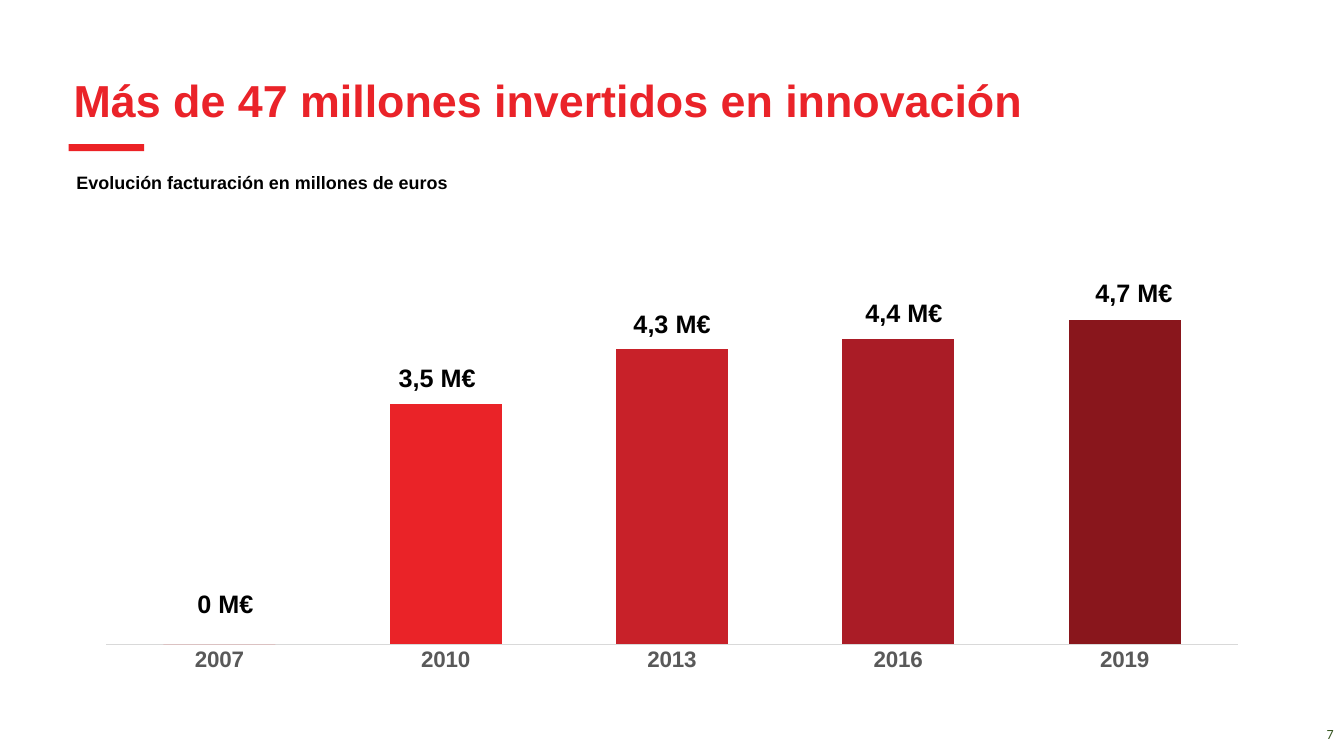
from lxml import etree
from pptx import Presentation
from pptx.chart.data import CategoryChartData
from pptx.dml.color import RGBColor
from pptx.enum import chart as ch, shapes, text
from pptx.util import Inches, Pt

RED = "EA2329"
BAR_COLORS = ["EA2328", "EA2328", "C82129", "AA1C26", "89161C"]
YEARS = ["2007", "2010", "2013", "2016", "2019"]
VALUES = [0, 74, 91, 94, 100]
LABELS = [
    ("0 M€", 1.74, 5.79),
    ("3,5 M€", 3.84, 3.55),
    ("4,3 M€", 6.17, 3.01),
    ("4,4 M€", 8.47, 2.9),
    ("4,7 M€", 10.75, 2.7),
]


def rgb(hex_color):
    """Turn a hex string into a colour."""
    return RGBColor.from_string(hex_color)


def set_font(font, color, **fmt):
    """Set the colour and format values of a font."""
    font.color.rgb = rgb(color)
    for name, value in fmt.items():
        setattr(font, name, value)


def add_text(s, box, content, size, color="000000", name="Arial", bold=True,
             frame=None, para=None):
    """Add a one-paragraph text box."""
    tf = s.shapes.add_textbox(*map(Inches, box)).text_frame
    p = tf.paragraphs[0]
    for target, fmt in ((tf, {"word_wrap": True, **(frame or {})}), (p, para or {})):
        for key, value in fmt.items():
            setattr(target, key, value)
    r = p.add_run()
    r.text = content
    set_font(r.font, color, size=Pt(size), name=name, bold=bold)


def add_header(s, x, y, w):
    """Place the title, its red rule and the subtitle."""
    margins = {"margin_left": Inches(0.05), "margin_right": Inches(0.05),
               "margin_top": Inches(0.03), "margin_bottom": Inches(0.03)}
    add_text(s, (x, y, w, 0.89), "Más de 47 millones invertidos en innovación",
             32, RED, frame={"vertical_anchor": text.MSO_ANCHOR.BOTTOM, **margins},
             para={"line_spacing": 0.9})
    sp = s.shapes.add_shape(shapes.MSO_SHAPE.RECTANGLE, Inches(x), Inches(y + 1.03),
                            Inches(0.75), Inches(0.07))
    sp.shadow.inherit = False
    sp.fill.solid()
    sp.fill.fore_color.rgb = rgb("EC2226")
    sp.line.fill.background()
    add_text(s, (x - 0.02, y + 1.29, 4.13, 0.31),
             "Evolución facturación en millones de euros", 12.8,
             para={"line_spacing": 0.8})


def set_plot_area(chart, **fractions):
    """Fix the inner plot area as fractions of the chart."""
    plot_area = chart._chartSpace.chart.plotArea
    ns = etree.QName(plot_area).namespace
    for old in plot_area.findall(f"{{{ns}}}layout"):
        plot_area.remove(old)
    layout = etree.Element(f"{{{ns}}}layout")
    manual = etree.SubElement(layout, f"{{{ns}}}manualLayout")
    values = {"layoutTarget": "inner", "xMode": "edge", "yMode": "edge", **fractions}
    for tag, value in values.items():
        etree.SubElement(manual, f"{{{ns}}}{tag}").set("val", str(value))
    plot_area.insert(0, layout)


def add_billing_chart(s, x, y, w, h):
    """Place the column chart of billing by year."""
    data = CategoryChartData()
    data.categories = YEARS
    data.add_series("Series 1", VALUES)
    chart = s.shapes.add_chart(ch.XL_CHART_TYPE.COLUMN_CLUSTERED,
                               *map(Inches, (x, y, w, h)), data).chart
    chart.has_legend = chart.has_title = False
    set_font(chart.font, "000000", size=Pt(10), name="Calibri")
    set_plot_area(chart, x=0.02, y=0.023, w=0.96, h=0.9)

    years = chart.category_axis
    years.major_tick_mark = ch.XL_TICK_MARK.NONE
    set_font(years.tick_labels.font, "595959", size=Pt(16), name="Arial", bold=True)
    years.format.line.color.rgb = rgb("D9D9D9")
    years.format.line.width = Pt(0.75)

    values = chart.value_axis
    for key, value in {"visible": False, "has_major_gridlines": False,
                       "minimum_scale": 0, "maximum_scale": 138}.items():
        setattr(values, key, value)

    plot = chart.plots[0]
    plot.vary_by_categories = False
    plot.gap_width, plot.overlap = 102, -27
    series = plot.series[0]
    for i, color in enumerate(BAR_COLORS):
        fill = series.points[i].format.fill
        fill.solid()
        fill.fore_color.rgb = rgb(color)


def add_bar_labels(s):
    """Place the amount above each bar."""
    for content, x, y in LABELS:
        add_text(s, (x, y, 0.99, 0.4), content, 18,
                 para={"alignment": text.PP_ALIGN.CENTER})


def main():
    """Build the slide and save it."""
    prs = Presentation()
    prs.slide_width, prs.slide_height = Inches(13.33), Inches(7.5)
    s = prs.slides.add_slide(prs.slide_layouts[6])
    add_header(s, 0.68, 0.4, 12.02)
    add_billing_chart(s, 0.82, 1.84, 11.69, 4.93)
    add_bar_labels(s)
    add_text(s, (13.06, 7.15, 0.27, 0.27), "7", 10, "385723", "Calibri", False)
    prs.save("out.pptx")


if __name__ == "__main__":
    main()
